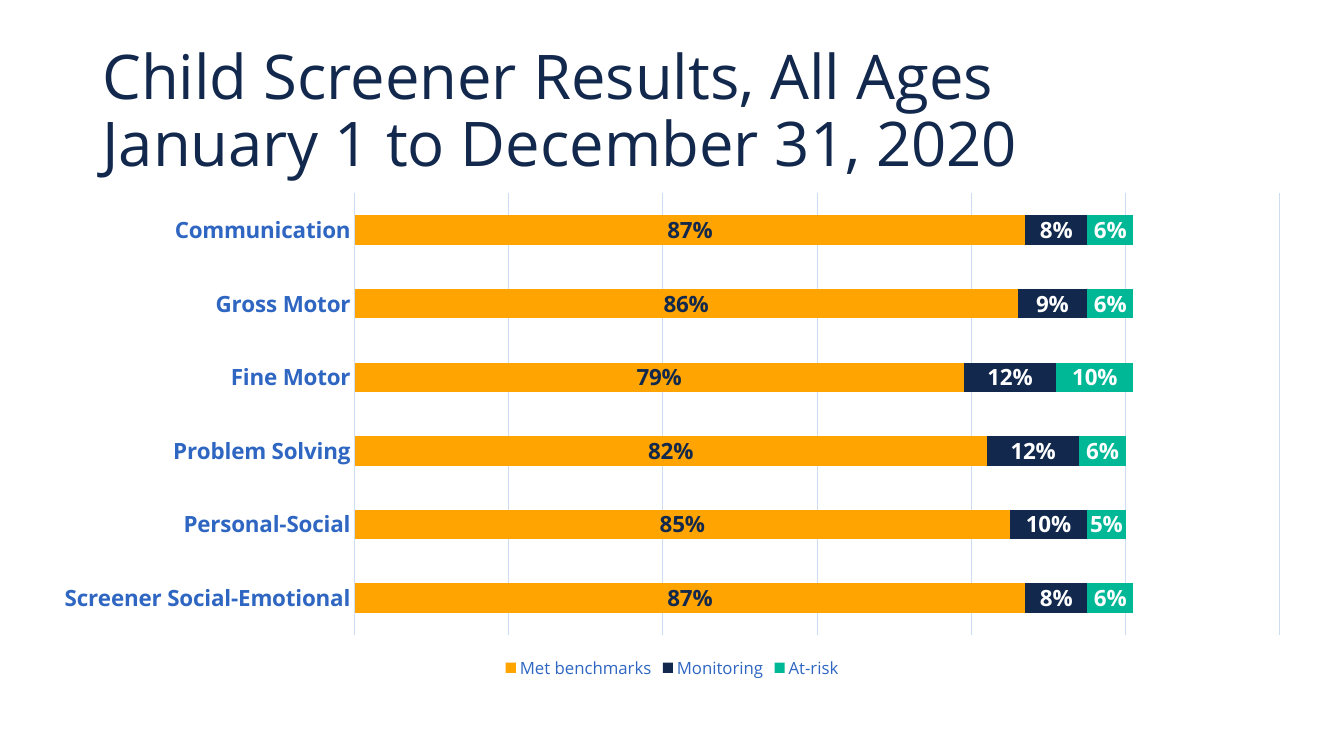
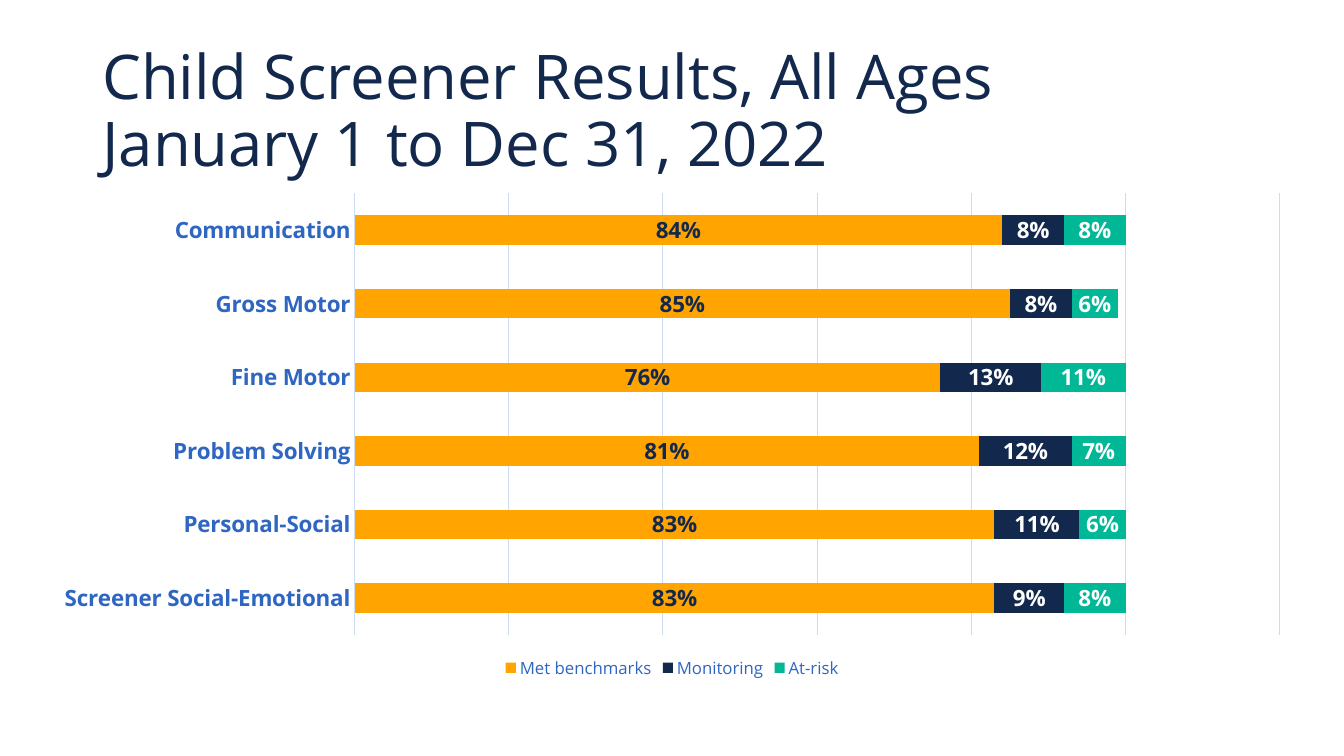
from pptx import Presentation
from pptx.chart.data import CategoryChartData
from pptx.dml.color import RGBColor
from pptx.enum.chart import XL_CHART_TYPE, XL_LABEL_POSITION, XL_LEGEND_POSITION, XL_TICK_MARK
from pptx.enum.text import MSO_ANCHOR
from pptx.util import Cm, Pt

NAVY = RGBColor(0x12, 0x28, 0x4C)
BLUE = RGBColor(0x2E, 0x66, 0xC2)
PALE_BLUE = RGBColor(0xCD, 0xDB, 0xF3)
ORANGE = RGBColor(0xFF, 0xA4, 0x00)
GREEN = RGBColor(0x00, 0xB7, 0x96)
WHITE = RGBColor(0xFF, 0xFF, 0xFF)

TITLE_FORMAT = {"size": Pt(44), "color": NAVY}
CHART_FORMAT = {"size": Pt(10), "color": NAVY}
DOMAIN_FORMAT = {"size": Pt(16), "bold": True, "color": BLUE}
LEGEND_FORMAT = {"size": Pt(12), "color": BLUE}

DOMAINS = ["Screener Social-Emotional", "Personal-Social", "Problem Solving",
           "Fine Motor", "Gross Motor", "Communication"]
OUTCOMES = [("Met benchmarks", ORANGE, NAVY), ("Monitoring", NAVY, WHITE), ("At-risk", GREEN, WHITE)]
PERIODS = [
    ("January 1 to December 31, 2020", [
        [0.87, 0.85, 0.82, 0.79, 0.86, 0.87],
        [0.08, 0.10, 0.12, 0.12, 0.09, 0.08],
        [0.06, 0.05, 0.06, 0.10, 0.06, 0.06],
    ]),
    ("January 1 to Dec 31, 2022", [
        [0.83, 0.83, 0.81, 0.76, 0.85, 0.84],
        [0.09, 0.11, 0.12, 0.13, 0.08, 0.08],
        [0.08, 0.06, 0.07, 0.11, 0.06, 0.08],
    ]),
]


def style_font(font, style):
    font.name = "Open Sans"
    for attribute, value in style.items():
        if attribute == "color":
            font.color.rgb = value
        else:
            setattr(font, attribute, value)


def style_line(line):
    line.color.rgb = PALE_BLUE
    line.width = Pt(0.75)


deck = Presentation()
deck.slide_width = Cm(33.87)
deck.slide_height = Cm(19.05)

for period, shares in PERIODS:
    slide = deck.slides.add_slide(deck.slide_layouts[6])

    title = slide.shapes.add_textbox(Cm(2.33), Cm(1.01), Cm(29.21), Cm(3.68)).text_frame
    title.word_wrap = True
    title.vertical_anchor = MSO_ANCHOR.MIDDLE
    title.text = f"Child Screener Results, All Ages\v{period}"
    heading = title.paragraphs[0]
    heading.line_spacing = 0.9
    for run in heading.runs:
        style_font(run.font, TITLE_FORMAT)

    results = CategoryChartData(number_format="0%")
    results.categories = DOMAINS
    for (outcome, _, _), values in zip(OUTCOMES, shares):
        results.add_series(outcome, values)
    chart = slide.shapes.add_chart(XL_CHART_TYPE.BAR_STACKED, Cm(0.99), Cm(4.62),
                                   Cm(31.9), Cm(12.6), results).chart
    style_font(chart.font, CHART_FORMAT)
    chart.has_title = False
    chart.has_legend = True
    chart.legend.position = XL_LEGEND_POSITION.BOTTOM
    chart.legend.include_in_layout = False
    style_font(chart.legend.font, LEGEND_FORMAT)

    domain_axis = chart.category_axis
    domain_axis.major_tick_mark = XL_TICK_MARK.NONE
    domain_axis.minor_tick_mark = XL_TICK_MARK.NONE
    style_font(domain_axis.tick_labels.font, DOMAIN_FORMAT)
    style_line(domain_axis.format.line)

    share_axis = chart.value_axis
    share_axis.minimum_scale = 0
    share_axis.maximum_scale = 1.2
    share_axis.major_unit = 0.2
    share_axis.has_major_gridlines = True
    style_line(share_axis.major_gridlines.format.line)
    share_axis.tick_labels.number_format = "0%"
    share_axis.tick_labels.number_format_is_linked = False
    share_axis.visible = False

    bars = chart.plots[0]
    bars.gap_width = 150
    bars.overlap = 100
    bars.vary_by_categories = False
    for series, (_, bar_color, label_color) in zip(bars.series, OUTCOMES):
        series.format.fill.solid()
        series.format.fill.fore_color.rgb = bar_color
        labels = series.data_labels
        labels.show_value = True
        labels.position = XL_LABEL_POSITION.CENTER
        labels.number_format = "0%"
        labels.number_format_is_linked = False
        style_font(labels.font, {"size": Pt(16), "bold": True, "color": label_color})

deck.save("out.pptx")
